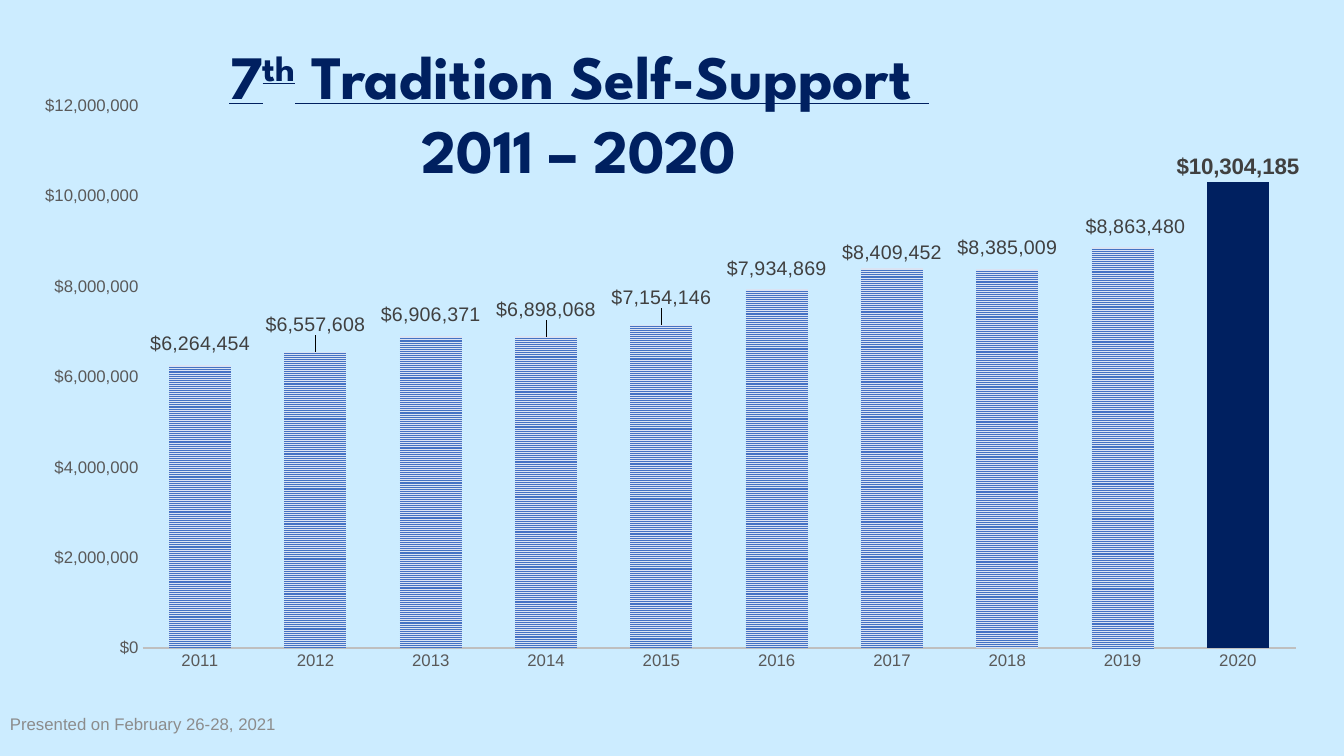
from lxml import etree
from pptx import Presentation
from pptx.chart.data import CategoryChartData
from pptx.dml.color import RGBColor
from pptx.enum.chart import XL_CHART_TYPE as ChartType, XL_LABEL_POSITION as LabelPos, XL_TICK_MARK as Tick
from pptx.enum.dml import MSO_PATTERN as Pattern
from pptx.enum.text import PP_ALIGN as Align
from pptx.oxml.ns import qn
from pptx.util import Inches, Pt

COLORS = {
    "background": "CCECFF",
    "navy": "002060",
    "stripe": "4472C4",
    "stripe_gap": "DAE3F3",
    "axis_text": "595959",
    "axis_line": "BFBFBF",
    "label": "404040",
    "footer": "8C8C8C",
    "black": "000000",
}
CONTRIBUTIONS = {
    "2011": 6264454,
    "2012": 6557608,
    "2013": 6906371,
    "2014": 6898068,
    "2015": 7154146,
    "2016": 7934869,
    "2017": 8409452,
    "2018": 8385009,
    "2019": 8863480,
    "2020": 10304185,
}
LABEL_SHIFTS = [
    (0, -0.01), (0, -0.02), (0, -0.01), (0, -0.02), (0, -0.02),
    (0, -0.01), (0, 0), (0, -0.01), (0.01, -0.01), (0, 0),
]
DOLLARS = '"$"#,##0'


def color(name):
    return RGBColor.from_string(COLORS[name])


def style_font(font, size, color_name, face="Arial", bold=False):
    font.name = face
    font.size = Pt(size)
    font.bold = bold
    font.color.rgb = color(color_name)


def add_text_area(slide, left, top, width, height):
    frame = slide.shapes.add_textbox(
        Inches(left), Inches(top), Inches(width), Inches(height)
    ).text_frame
    frame.word_wrap = True
    return frame


def add_title(slide):
    frame = add_text_area(slide, -0.92, 0.33, 13.33, 1.58)
    lines = [["7", "th", " Tradition Self-Support "], ["2011 – 2020"]]
    for index, pieces in enumerate(lines):
        line = frame.add_paragraph() if index else frame.paragraphs[0]
        line.alignment = Align.CENTER
        for piece in pieces:
            run = line.add_run()
            run.text = piece
            style_font(run.font, 44, "navy", "League Spartan", True)
            run.font.underline = index == 0
            if piece == "th":
                run.font._element.set("baseline", "30000")


def add_footer(slide):
    frame = add_text_area(slide, 0, 7.03, 3, 0.4)
    frame.text = "Presented on February 26-28, 2021"
    style_font(frame.paragraphs[0].runs[0].font, 12, "footer")


def make_layout(**settings):
    layout = etree.Element(qn("c:layout"))
    manual = etree.SubElement(layout, qn("c:manualLayout"))
    for tag, value in settings.items():
        etree.SubElement(manual, qn(f"c:{tag}")).set("val", str(value))
    return layout


def place_plot(chart):
    plot_area = chart._chartSpace.chart.plotArea
    for automatic in plot_area.findall(qn("c:layout")):
        plot_area.remove(automatic)
    plot_area.insert(0, make_layout(
        layoutTarget="inner", xMode="edge", yMode="edge",
        x=0.085, y=0.037, w=0.897, h=0.909,
    ))


def style_axis(axis):
    axis.major_tick_mark = axis.minor_tick_mark = Tick.NONE
    axis.has_major_gridlines = False
    style_font(axis.tick_labels.font, 12, "axis_text")


def label_bars(bars):
    last = len(LABEL_SHIFTS) - 1
    for index, (x, y) in enumerate(LABEL_SHIFTS):
        label = bars.points[index].data_label
        style_font(label.font, 16 if index == last else 14, "label", bold=index == last)
        label.position = LabelPos.OUTSIDE_END
        if x or y:
            entry = bars.data_labels._element.findall(qn("c:dLbl"))[index]
            entry.insert(1, make_layout(x=x, y=y))


def add_contributions_chart(slide):
    data = CategoryChartData(number_format=DOLLARS)
    data.categories = list(CONTRIBUTIONS)
    data.add_series("Series 1", list(CONTRIBUTIONS.values()))
    chart = slide.shapes.add_chart(
        ChartType.COLUMN_CLUSTERED,
        Inches(0.33), Inches(0.83), Inches(12.75), Inches(5.92), data,
    ).chart
    chart.has_title = chart.has_legend = False
    style_font(chart.font, 10, "black")
    place_plot(chart)

    years, amounts = chart.category_axis, chart.value_axis
    style_axis(years)
    style_axis(amounts)
    years.format.line.color.rgb = color("axis_line")
    years.format.line.width = Pt(1.5)
    amounts.format.line.fill.background()
    amounts.minimum_scale, amounts.maximum_scale = 0, 12000000
    amounts.major_unit = 2000000
    amounts.tick_labels.number_format = DOLLARS
    amounts.tick_labels.number_format_is_linked = False

    plot = chart.plots[0]
    plot.gap_width, plot.overlap = 86, -22
    plot.vary_by_categories = False
    bars = plot.series[0]
    bars.invert_if_negative = False
    bars.format.fill.patterned()
    bars.format.fill.pattern = Pattern.NARROW_HORIZONTAL
    bars.format.fill.fore_color.rgb = color("stripe")
    bars.format.fill.back_color.rgb = color("stripe_gap")
    latest = bars.points[len(CONTRIBUTIONS) - 1].format.fill
    latest.solid()
    latest.fore_color.rgb = color("navy")

    style_font(bars.data_labels.font, 14, "label")
    bars.data_labels.show_value = True
    bars.data_labels.number_format = DOLLARS
    bars.data_labels.number_format_is_linked = False
    bars.data_labels.position = LabelPos.OUTSIDE_END
    label_bars(bars)


def main():
    deck = Presentation()
    deck.slide_width, deck.slide_height = Inches(13.33), Inches(7.5)
    slide = deck.slides.add_slide(deck.slide_layouts[6])
    slide.background.fill.solid()
    slide.background.fill.fore_color.rgb = color("background")
    add_title(slide)
    add_contributions_chart(slide)
    add_footer(slide)
    deck.save("out.pptx")


if __name__ == "__main__":
    main()
